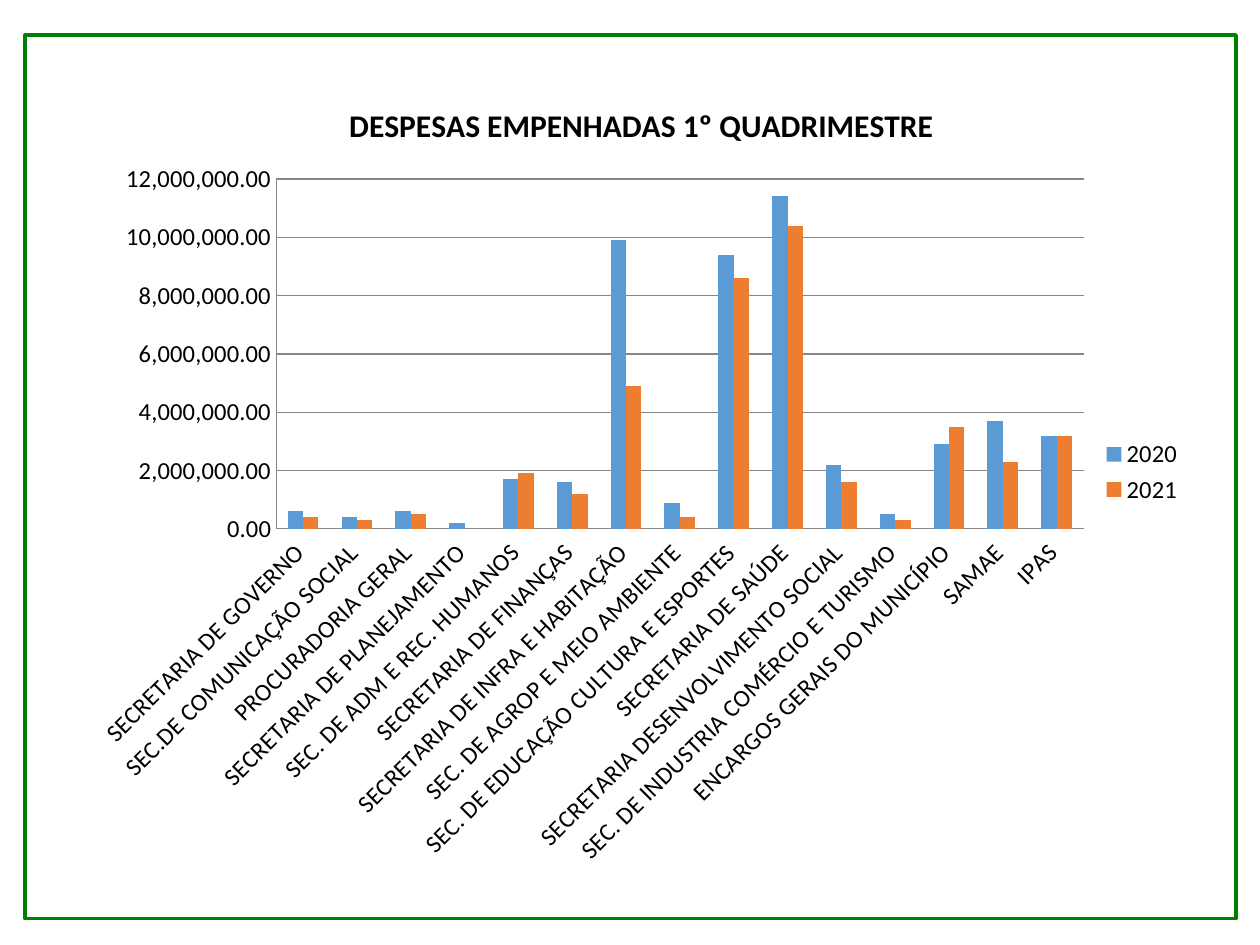
from lxml.etree import SubElement
from pptx import Presentation
from pptx.chart.data import CategoryChartData
from pptx.dml.color import RGBColor
from pptx.enum.chart import XL_CHART_TYPE, XL_LEGEND_POSITION, XL_TICK_MARK
from pptx.enum.shapes import MSO_SHAPE
from pptx.oxml.ns import qn
from pptx.util import Inches, Pt

WIDTH, HEIGHT = 10, 7.5
GREEN, BLACK, GRAY = "008000", "000000", "868686"
DEPARTMENTS = [
    "SECRETARIA DE GOVERNO",
    "SEC.DE COMUNICAÇÃO SOCIAL",
    "PROCURADORIA GERAL",
    "SECRETARIA DE PLANEJAMENTO",
    "SEC. DE ADM E REC. HUMANOS",
    "SECRETARIA DE FINANÇAS",
    "SECRETARIA DE INFRA E HABITAÇÃO",
    "SEC. DE AGROP E MEIO AMBIENTE",
    "SEC. DE EDUCAÇÃO CULTURA E ESPORTES",
    "SECRETARIA DE SAÚDE",
    "SECRETARIA DESENVOLVIMENTO SOCIAL",
    "SEC. DE INDUSTRIA COMÉRCIO E TURISMO",
    "ENCARGOS GERAIS DO MUNICÍPIO",
    "SAMAE",
    "IPAS",
]
# Year: (colour, spending in hundreds of thousands)
SPENDING = {
    "2020": ("5B9BD5", [6, 4, 6, 2, 17, 16, 99, 9, 94, 114, 22, 5, 29, 37, 32]),
    "2021": ("ED7D31", [4, 3, 5, 0, 19, 12, 49, 4, 86, 104, 16, 3, 35, 23, 32]),
}


def color(hex_text):
    return RGBColor.from_string(hex_text)


def box(x, y, w, h):
    """Turn shares of the slide's size into lengths."""
    return [Inches(share * size)
            for share, size in zip((x, y, w, h), (WIDTH, HEIGHT) * 2)]


def set_format(target, values):
    for name, value in values.items():
        setattr(target, name, value)


def style_font(font, size, bold=False):
    set_format(font, {"name": "Calibri", "size": Pt(size), "bold": bold})
    font.color.rgb = color(BLACK)


def style_line(line, hex_text, width):
    line.color.rgb = color(hex_text)
    line.width = Pt(width)


def place(parent, index, **shares):
    """Give a chart part a manual layout, in shares of the chart's size."""
    for old in parent.findall(qn("c:layout")):
        parent.remove(old)
    layout = SubElement(parent, qn("c:layout"))
    parent.insert(index, layout)
    manual = SubElement(layout, qn("c:manualLayout"))
    settings = {"xMode": "edge", "yMode": "edge", **shares}
    if "w" in shares:
        settings = {"layoutTarget": "inner", **settings}
    for tag, value in settings.items():
        SubElement(manual, qn(f"c:{tag}")).set("val", str(value))


def add_frame(s):
    sp = s.shapes.add_shape(MSO_SHAPE.RECTANGLE, *box(0.02, 0.037, 0.961, 0.935))
    sp.shadow.inherit = False
    sp.fill.background()
    style_line(sp.line, GREEN, 2)


def style_axes(chart):
    for axis in (chart.category_axis, chart.value_axis):
        set_format(axis, {"major_tick_mark": XL_TICK_MARK.NONE,
                          "minor_tick_mark": XL_TICK_MARK.NONE})
        style_line(axis.format.line, GRAY, 0.75)
        style_font(axis.tick_labels.font, 14)
    labels = chart.category_axis.tick_labels
    labels.font._element.getparent().getparent().getparent().find(
        qn("a:bodyPr")).set("rot", str(-45 * 60000))
    axis = chart.value_axis
    set_format(axis, {"minimum_scale": 0, "maximum_scale": 12_000_000,
                      "major_unit": 2_000_000})
    set_format(axis.tick_labels, {"number_format": "#,##0.00",
                                  "number_format_is_linked": False})
    style_line(axis.major_gridlines.format.line, GRAY, 0.75)


def add_title(chart, text):
    p = chart.chart_title.text_frame.paragraphs[0]
    r = p.add_run()
    r.text = text
    style_font(r.font, 18, bold=True)
    place(chart.chart_title._element, 1, x=0.24, y=0.04)


def add_spending_chart(s):
    data = CategoryChartData(number_format="#,##0.00")
    data.categories = [f"{name} " for name in DEPARTMENTS]
    for year, (_, values) in SPENDING.items():
        data.add_series(year, [v * 100_000 for v in values])
    chart = s.shapes.add_chart(XL_CHART_TYPE.COLUMN_CLUSTERED,
                               *box(0.059, 0.069, 0.89, 0.861), data).chart
    style_font(chart.font, 14)
    add_title(chart, "DESPESAS EMPENHADAS 1º QUADRIMESTRE")
    plot = chart.plots[0]
    set_format(plot, {"gap_width": 150, "overlap": 0, "vary_by_categories": False})
    for series, (hex_text, _) in zip(plot.series, SPENDING.values()):
        series.format.fill.solid()
        series.format.fill.fore_color.rgb = color(hex_text)
    style_axes(chart)
    chart.has_legend = True
    set_format(chart.legend, {"position": XL_LEGEND_POSITION.RIGHT,
                              "include_in_layout": False})
    style_font(chart.legend.font, 14)
    place(chart._chartSpace.chart.plotArea, 0, x=0.18, y=0.14, w=0.72, h=0.43)


def main():
    prs = Presentation()
    set_format(prs, {"slide_width": Inches(WIDTH), "slide_height": Inches(HEIGHT)})
    s = prs.slides.add_slide(prs.slide_layouts[6])
    add_frame(s)
    add_spending_chart(s)
    prs.save("out.pptx")


if __name__ == "__main__":
    main()
